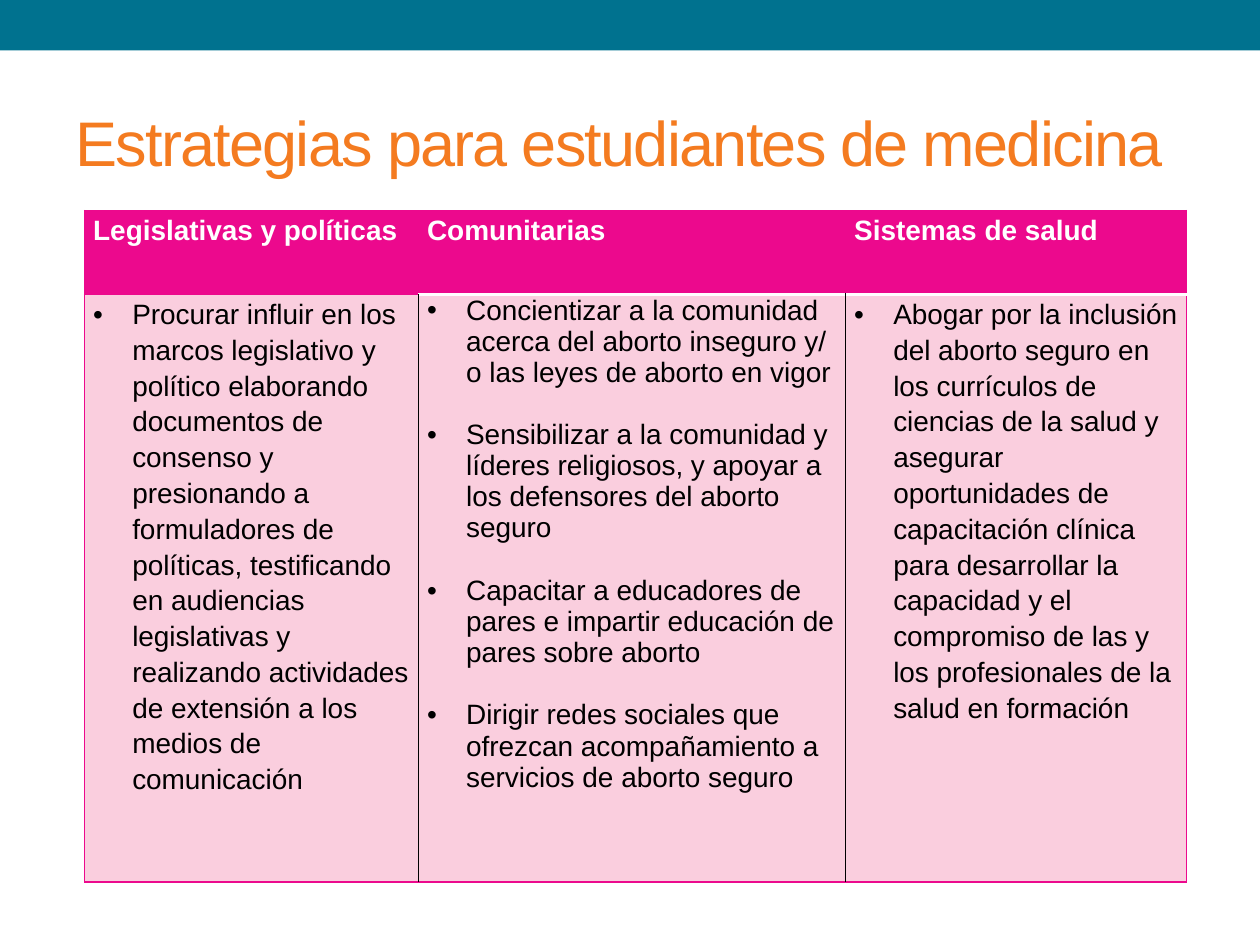
"""Build a slide with a three-column table of strategies for medical students."""
from lxml import etree
from pptx import Presentation
from pptx.dml.color import RGBColor
from pptx.enum.shapes import MSO_SHAPE
from pptx.enum.text import MSO_ANCHOR
from pptx.oxml.ns import qn
from pptx.util import Inches, Pt

RECTANGLE = MSO_SHAPE.RECTANGLE
MIDDLE = MSO_ANCHOR.MIDDLE
FONT = "Arial"
TEAL, ORANGE, MAGENTA, PINK = "00728F", "F47B20", "EC098D", "FACEDE"
WHITE, BLACK = "FFFFFF", "000000"

TITLE = "Estrategias para estudiantes de medicina"
COLUMNS = [
    {
        "heading": "Legislativas y políticas",
        "width": 2.65,
        "points": [
            "Procurar influir en los marcos legislativo y político elaborando "
            "documentos de consenso y presionando a formuladores de políticas, "
            "testificando en audiencias legislativas y realizando actividades de "
            "extensión a los medios de comunicación",
        ],
        "line_spacing": 1.15,
        "space_after": 12,
    },
    {
        "heading": "Comunitarias",
        "width": 3.39,
        "points": [
            "Concientizar a la comunidad acerca del aborto inseguro y/ o las leyes "
            "de aborto en vigor",
            "Sensibilizar a la comunidad y líderes religiosos, y apoyar a los "
            "defensores del aborto seguro",
            "Capacitar a educadores de pares e impartir educación de pares sobre "
            "aborto",
            "Dirigir redes sociales que ofrezcan acompañamiento a servicios de "
            "aborto seguro",
        ],
        "line_spacing": 1.0,
        "space_after": 17.9,
    },
    {
        "heading": "Sistemas de salud",
        "width": 2.71,
        "points": [
            "Abogar por la inclusión del aborto seguro en los currículos de "
            "ciencias de la salud y asegurar oportunidades de capacitación clínica "
            "para desarrollar la capacidad y el compromiso de las y los "
            "profesionales de la salud en formación",
        ],
        "line_spacing": 1.15,
        "space_after": 12,
    },
]
ROW_HEIGHTS = [0.67, 4.66]
EDGE, DIVIDER, HEADER_RULE = (MAGENTA, 0.75), (BLACK, 1), (WHITE, 2.08)


def color(value):
    return RGBColor.from_string(value)


def style_runs(paragraph, size, value, bold=False):
    for run in paragraph.runs:
        run.font.name = FONT
        run.font.size = Pt(size)
        run.font.bold = bold
        run.font.color.rgb = color(value)


def add_bullet(paragraph):
    properties = paragraph._p.get_or_add_pPr()
    properties.set("marL", str(Inches(0.31)))
    properties.set("indent", str(-Inches(0.31)))
    etree.SubElement(properties, qn("a:buFont"), typeface=FONT)
    etree.SubElement(properties, qn("a:buChar"), char="•")


def set_borders(cell, **borders):
    properties = cell._tc.get_or_add_tcPr()
    for side in "LRTB":
        border = borders.get(side)
        width = Pt(border[1]) if border else 0
        line = etree.SubElement(properties, qn(f"a:ln{side}"), w=str(width))
        if border:
            fill = etree.SubElement(line, qn("a:solidFill"))
            etree.SubElement(fill, qn("a:srgbClr"), val=border[0])
        else:
            etree.SubElement(line, qn("a:noFill"))


def fill_cell(cell, texts, fill, text_color, spacing, after, heading=False):
    cell.margin_left = cell.margin_right = Inches(0.07)
    cell.margin_top = cell.margin_bottom = 0
    cell.fill.solid()
    cell.fill.fore_color.rgb = color(fill)
    cell.text_frame.text = "\n".join(texts)
    for paragraph in cell.text_frame.paragraphs:
        paragraph.line_spacing = spacing
        paragraph.space_after = Pt(after)
        style_runs(paragraph, 16, text_color, heading)
        if not heading:
            add_bullet(paragraph)


def add_banner(slide):
    banner = slide.shapes.add_shape(RECTANGLE, 0, 0, Inches(10), Inches(0.4))
    banner.shadow.inherit = False
    banner.fill.solid()
    banner.fill.fore_color.rgb = color(TEAL)
    banner.line.fill.background()


def add_title(slide):
    title = slide.shapes.add_textbox(Inches(0.5), Inches(0.58), Inches(9), Inches(1.08))
    text_frame = title.text_frame
    text_frame.word_wrap = True
    text_frame.vertical_anchor = MIDDLE
    text_frame.text = TITLE
    paragraph = text_frame.paragraphs[0]
    style_runs(paragraph, 36, ORANGE)
    paragraph.runs[0].font._element.set("spc", "-100")


def add_strategy_table(slide):
    width = sum(column["width"] for column in COLUMNS)
    table = slide.shapes.add_table(
        len(ROW_HEIGHTS), len(COLUMNS), Inches(0.67), Inches(1.67),
        Inches(width), Inches(sum(ROW_HEIGHTS)),
    ).table
    for row, height in zip(table.rows, ROW_HEIGHTS):
        row.height = Inches(height)
    last = len(COLUMNS) - 1
    for index, column in enumerate(COLUMNS):
        table.columns[index].width = Inches(column["width"])
        header, body = table.cell(0, index), table.cell(1, index)
        left = EDGE if index == 0 else None
        right = EDGE if index == last else None
        rule = EDGE if index == 0 else HEADER_RULE
        set_borders(header, L=left, R=right, T=EDGE, B=rule)
        set_borders(body, L=left or DIVIDER, R=right or DIVIDER, T=rule, B=EDGE)
        fill_cell(header, [column["heading"]], MAGENTA, WHITE, 1.15, 12, True)
        fill_cell(body, column["points"], PINK, BLACK,
                  column["line_spacing"], column["space_after"])


def main():
    presentation = Presentation()
    presentation.slide_width, presentation.slide_height = Inches(10), Inches(7.5)
    slide = presentation.slides.add_slide(presentation.slide_layouts[6])
    add_banner(slide)
    add_title(slide)
    add_strategy_table(slide)
    presentation.save("out.pptx")


if __name__ == "__main__":
    main()
